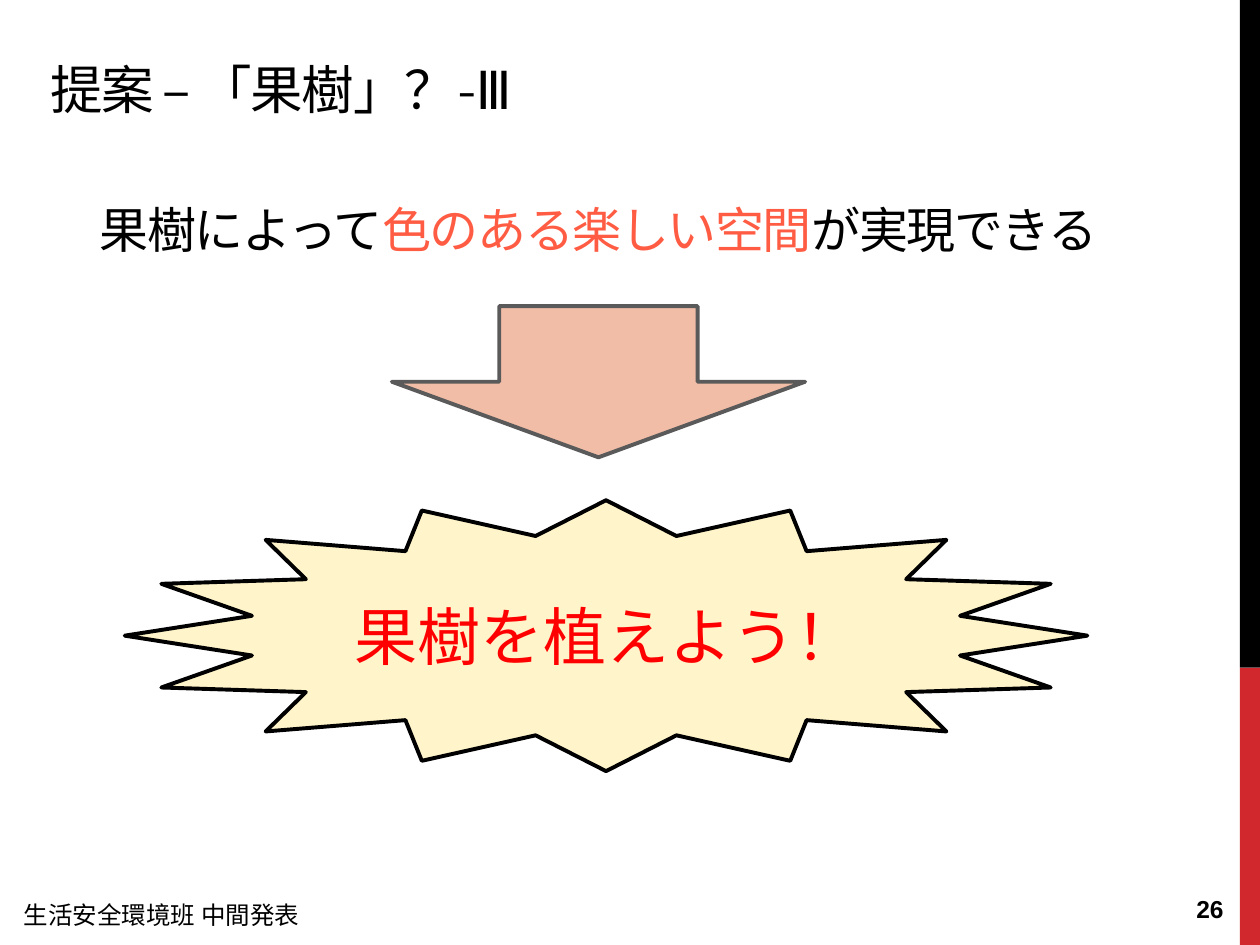
from pptx import Presentation
from pptx import util as u
from pptx.dml.color import RGBColor
from pptx.enum import shapes, text

WIDTH, HEIGHT = 10, 7.5
BAR_LEFT, BAR_SPLIT = 9.84, 5.3
COLORS = {
    "black": "000000",
    "crimson": "D1282E",
    "coral": "FF5C43",
    "red": "FF0000",
    "cream": "FFF4CA",
    "peach": "F1BDA7",
    "gray": "5A5A5A",
}
ALIGN = text.PP_ALIGN
ANCHOR = text.MSO_ANCHOR
SHAPE = shapes.MSO_SHAPE


def color(name):
    return RGBColor.from_string(COLORS[name])


def inches(*lengths):
    return [u.Inches(length) for length in lengths]


def write(shape, runs, size, font="Arial", bold=False, spacing=None,
          align=ALIGN.LEFT, anchor=ANCHOR.MIDDLE):
    """Fill a shape with one paragraph of (wording, colour) runs."""
    frame = shape.text_frame
    frame.word_wrap = True
    frame.auto_size = text.MSO_AUTO_SIZE.NONE
    frame.vertical_anchor = anchor
    paragraph = frame.paragraphs[0]
    paragraph.alignment = align
    for wording, color_name in runs:
        run = paragraph.add_run()
        run.text = wording
        run.font.name = font
        run.font.size = u.Pt(size)
        run.font.bold = bold
        run.font.color.rgb = color(color_name)
        if spacing is not None:
            run.font._element.set("spc", str(round(spacing * 100)))


def add_text(slide, box, wording, size, color_name="black", **style):
    shape = slide.shapes.add_textbox(*inches(*box))
    write(shape, [(wording, color_name)], size, **style)


def add_figure(slide, kind, box, fill, line=None):
    shape = slide.shapes.add_shape(kind, *inches(*box))
    shape.shadow.inherit = False
    shape.fill.solid()
    shape.fill.fore_color.rgb = color(fill)
    if line:
        shape.line.color.rgb = color(line)
        shape.line.width = u.Pt(2.25)
    else:
        shape.line.fill.background()
    return shape


def set_title(slide, box, runs):
    title = slide.shapes.title
    title.left, title.top, title.width, title.height = inches(*box)
    write(title, runs, 28, font="Montserrat", spacing=-0.8, align=ALIGN.CENTER)


def main():
    presentation = Presentation()
    presentation.slide_width, presentation.slide_height = inches(WIDTH, HEIGHT)
    slide = presentation.slides.add_slide(presentation.slide_layouts[5])

    # Bar along the right edge
    bar_width = WIDTH - BAR_LEFT
    for top, bottom, fill in ((0, BAR_SPLIT, "black"),
                              (BAR_SPLIT, HEIGHT, "crimson")):
        add_figure(slide, SHAPE.RECTANGLE,
                   (BAR_LEFT, top, bar_width, bottom - top), fill)

    # Heading and key statement
    add_text(slide, (0.3, 0.26, 5.82, 0.88), "提案 – 「果樹」？-Ⅲ", 30,
             font="Montserrat", spacing=-0.8)
    set_title(slide, (0.5, 1.42, 8.5, 0.8), [
        ("果樹によって", "black"),
        ("色のある楽しい空間", "coral"),
        ("が実現できる", "black"),
    ])

    # Arrow leading to the call to action
    arrow = add_figure(slide, SHAPE.DOWN_ARROW, (3.11, 2.43, 3.28, 1.2),
                       "peach", "gray")
    arrow.adjustments[0] = 0.48
    arrow.adjustments[1] = 0.5
    add_figure(slide, SHAPE.STAR_16_POINT, (0.99, 3.97, 7.64, 2.15),
               "cream", "black")
    add_text(slide, (0.26, 4.69, 9.11, 0.71), "果樹を植えよう！", 36, "red",
             align=ALIGN.CENTER, anchor=ANCHOR.TOP)

    # Footer
    add_text(slide, (0.09, 7.07, 2.58, 0.38), "生活安全環境班 中間発表", 14)
    add_text(slide, (9.21, 7.05, 0.6, 0.4), "26", 14, bold=True,
             align=ALIGN.RIGHT, anchor=ANCHOR.TOP)

    presentation.save("out.pptx")


if __name__ == "__main__":
    main()
